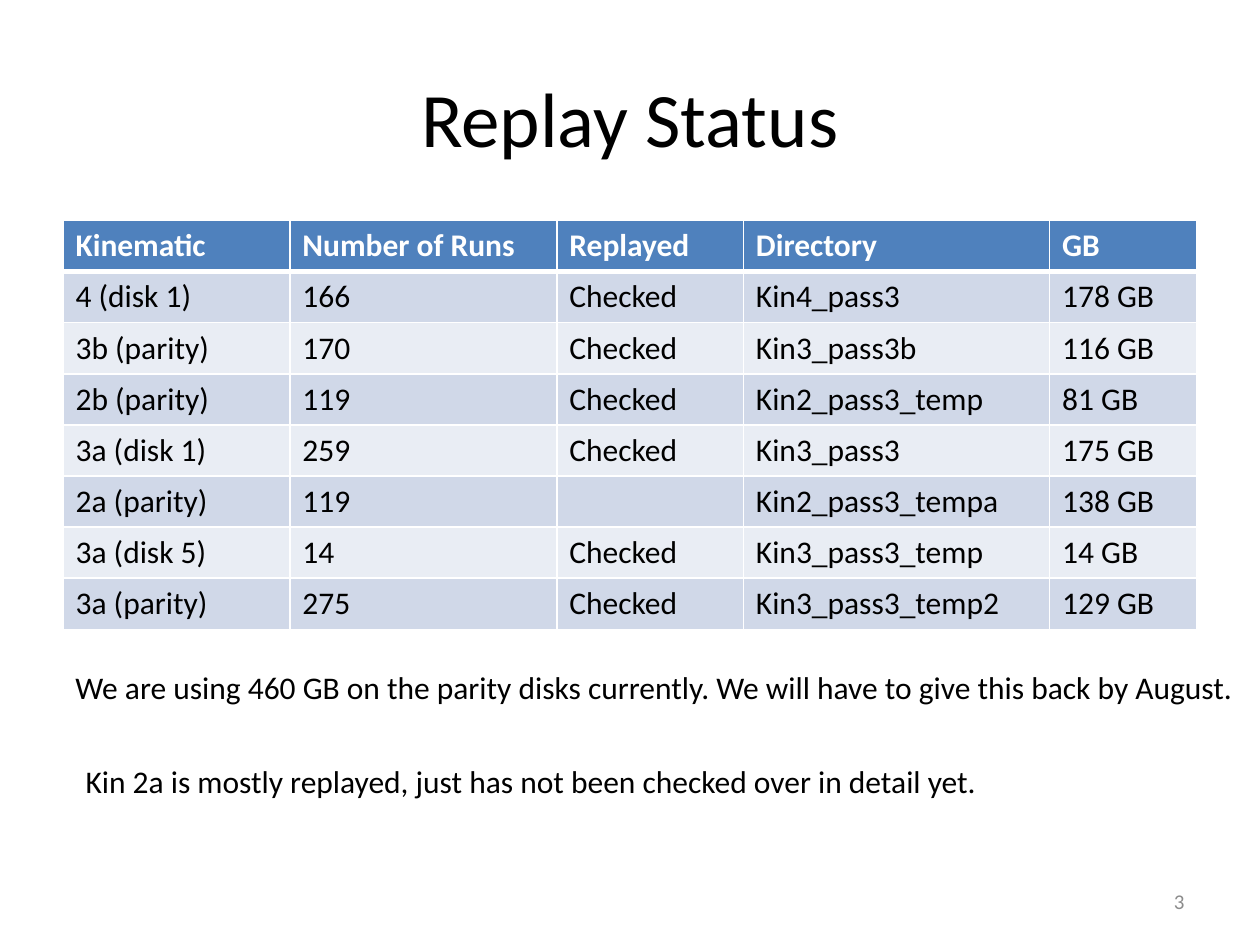
import pptx
import pptx.dml.color
import pptx.enum.text
import pptx.oxml.ns
import pptx.util
from lxml import etree

Pt = pptx.util.Pt
ALIGN = pptx.enum.text.PP_ALIGN
ANCHOR = pptx.enum.text.MSO_ANCHOR

HEADER_FILL = "4F81BD"
BAND_FILLS = ("D0D8E8", "E9EDF4")
COLUMN_WIDTHS = (129.6, 152.6, 106.6, 175, 84.2)
ROWS = (
    ("Kinematic", "Number of Runs", "Replayed", "Directory", "GB"),
    ("4 (disk 1)", "166", "Checked", "Kin4_pass3", "178 GB"),
    ("3b (parity)", "170", "Checked", "Kin3_pass3b", "116 GB"),
    ("2b (parity)", "119", "Checked", "Kin2_pass3_temp", "81 GB"),
    ("3a (disk 1)", "259", "Checked", "Kin3_pass3", "175 GB"),
    ("2a (parity)", "119", "", "Kin2_pass3_tempa", "138 GB"),
    ("3a (disk 5)", "14", "Checked", "Kin3_pass3_temp", "14 GB"),
    ("3a (parity)", "275", "Checked", "Kin3_pass3_temp2", "129 GB"),
)


def rgb(value):
    return pptx.dml.color.RGBColor.from_string(value)


def write(tf, text, size=18, color="000000", bold=False, align=ALIGN.LEFT):
    p = tf.paragraphs[0]
    p.alignment = align
    r = p.add_run()
    r.text = text
    r.font.name = "Calibri"
    r.font.size = Pt(size)
    r.font.bold = bold
    r.font.color.rgb = rgb(color)


def add_text(s, box, text, wrap=True, anchor=ANCHOR.TOP, **style):
    sp = s.shapes.add_textbox(*map(Pt, box))
    tf = sp.text_frame
    tf.word_wrap = wrap
    tf.vertical_anchor = anchor
    write(tf, text, **style)
    if not wrap:
        tf.auto_size = pptx.enum.text.MSO_AUTO_SIZE.SHAPE_TO_FIT_TEXT


def set_borders(cell, color="FFFFFF", **widths):
    tc_pr = cell._tc.get_or_add_tcPr()
    qn = pptx.oxml.ns.qn
    for i, side in enumerate("LRTB"):
        ln = etree.Element(qn(f"a:ln{side}"), w=str(Pt(widths.get(side, 1))))
        fill = etree.SubElement(ln, qn("a:solidFill"))
        etree.SubElement(fill, qn("a:srgbClr"), val=color)
        tc_pr.insert(i, ln)


def add_status_table(s, box):
    table = s.shapes.add_table(len(ROWS), len(COLUMN_WIDTHS), *map(Pt, box)).table
    for column, width in zip(table.columns, COLUMN_WIDTHS):
        column.width = Pt(width)
    for i, values in enumerate(ROWS):
        header = i == 0
        table.rows[i].height = Pt(box[3] / len(ROWS))
        for j, value in enumerate(values):
            cell = table.cell(i, j)
            cell.fill.solid()
            cell.fill.fore_color.rgb = rgb(HEADER_FILL if header else BAND_FILLS[(i - 1) % 2])
            # A thick rule separates the header from the body
            set_borders(cell, T=3 if i == 1 else 1, B=3 if header else 1)
            if value:
                write(cell.text_frame, value, bold=header,
                      color="FFFFFF" if header else "000000")


def add_notes_below(s, left, top):
    add_text(s, (left, top, 684, 29), "We are using 460 GB on the parity disks currently. "
             "We will have to give this back by August.", wrap=False)
    add_text(s, (left + 5.8, top + 54, 525.6, 29), "Kin 2a is mostly replayed, "
             "just has not been checked over in detail yet.", wrap=False)


def main():
    prs = pptx.Presentation()
    prs.slide_width, prs.slide_height = Pt(720), Pt(540)
    s = prs.slides.add_slide(prs.slide_layouts[6])

    # Title
    add_text(s, (36, 21.6, 648, 90), "Replay Status", size=44,
             align=ALIGN.CENTER, anchor=ANCHOR.MIDDLE)
    # Replay table and remarks
    add_status_table(s, (36, 126, 648, 233.6))
    add_notes_below(s, 36, 378)
    # Slide number
    add_text(s, (516, 500.5, 168, 28.8), "3", size=12, color="8C8C8C",
             align=ALIGN.RIGHT, anchor=ANCHOR.MIDDLE)

    prs.save("out.pptx")


if __name__ == "__main__":
    main()
